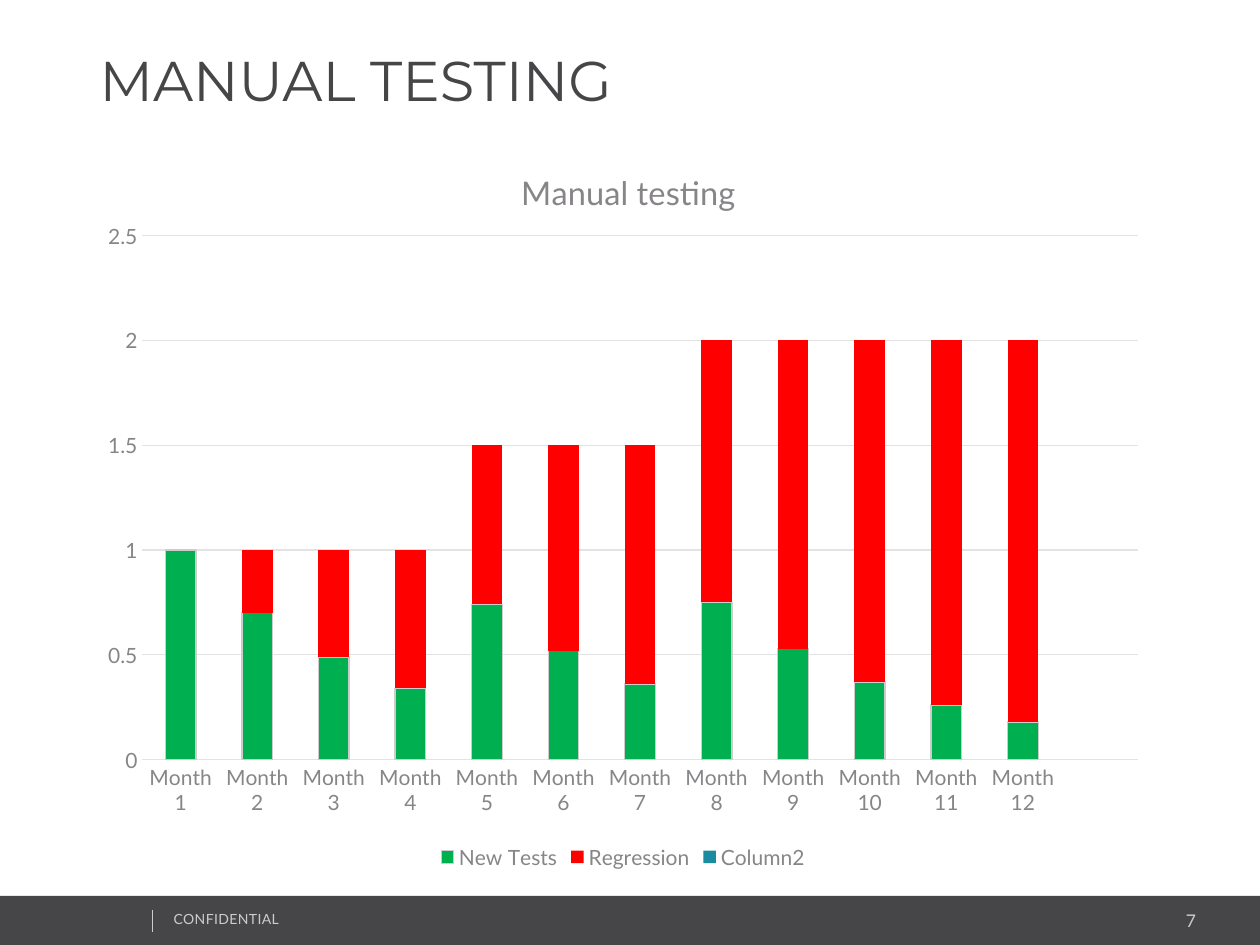
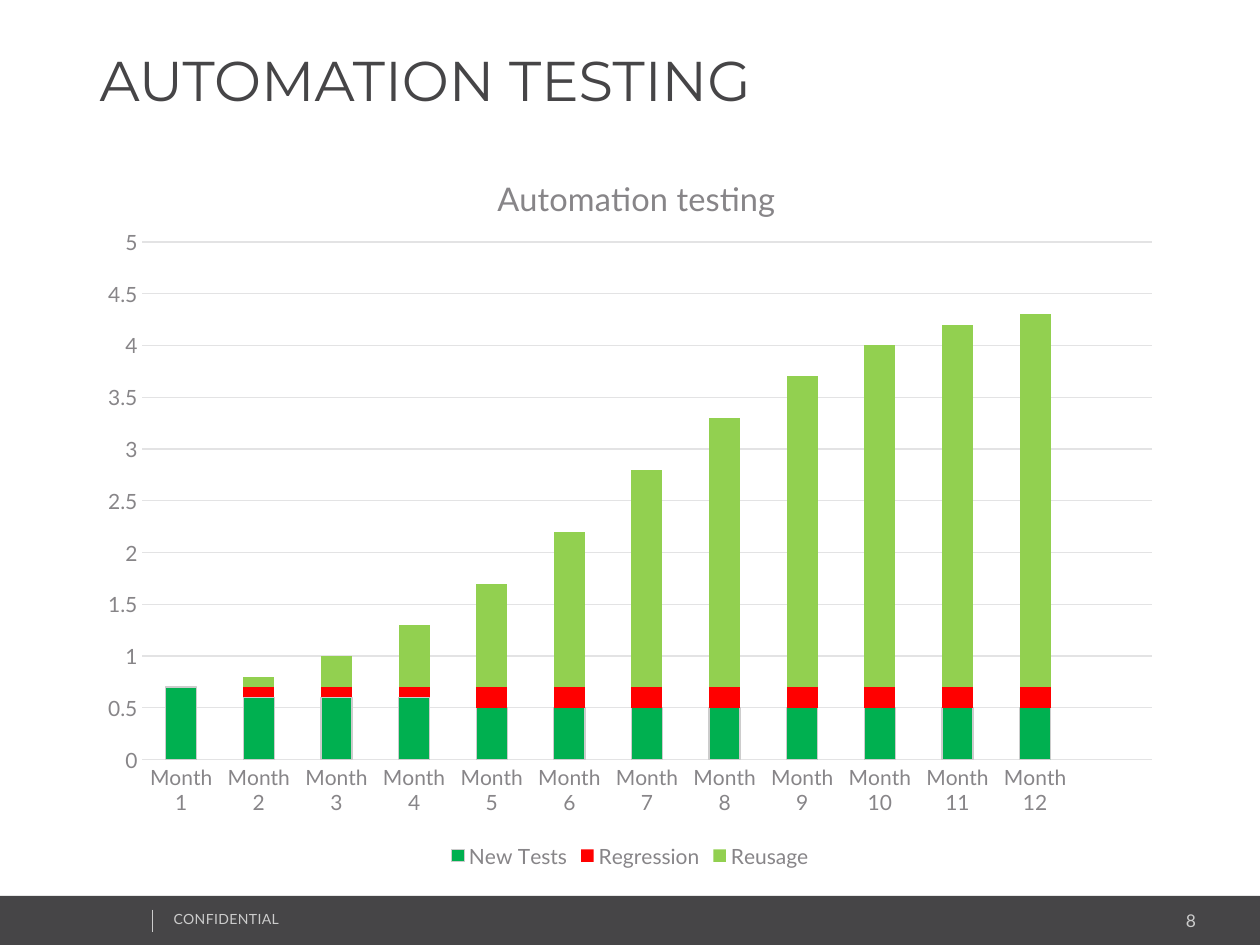
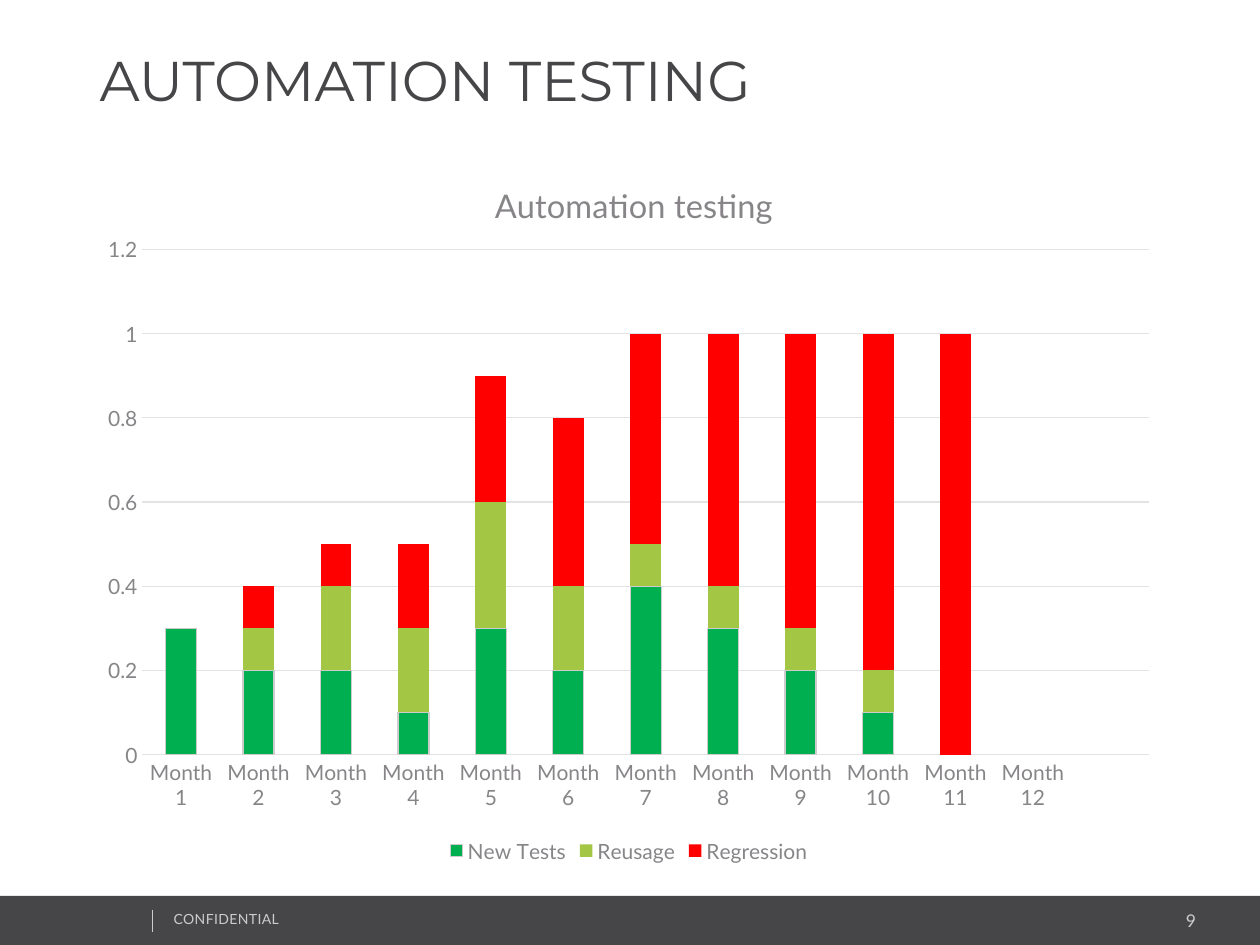
from pptx import Presentation
from pptx.chart.data import CategoryChartData
from pptx.dml.color import RGBColor
from pptx.enum.chart import XL_CHART_TYPE, XL_LEGEND_POSITION, XL_TICK_MARK
from pptx.enum.shapes import MSO_CONNECTOR, MSO_SHAPE
from pptx.enum.text import MSO_ANCHOR, PP_ALIGN
from pptx.oxml import parse_xml
from pptx.oxml.ns import nsdecls, qn
from pptx.util import Inches, Pt

STACKED = XL_CHART_TYPE.COLUMN_STACKED
BOTTOM = XL_LEGEND_POSITION.BOTTOM
NO_TICK = XL_TICK_MARK.NONE
STRAIGHT = MSO_CONNECTOR.STRAIGHT
RECT = MSO_SHAPE.RECTANGLE
TOP = MSO_ANCHOR.TOP
LEFT, RIGHT = PP_ALIGN.LEFT, PP_ALIGN.RIGHT

HEAD, BODY = "Montserrat", "Lato"
DARK, GREY, PALE, GRID = "464547", "878588", "CCCCCC", "E3E3E4"
GREEN, RED, TEAL, LIME, OLIVE = "00B050", "FF0000", "1B8BA0", "92D050", "A3C644"

FIRST_PAGE = 7
TITLE_ONLY = 5
MONTHS = [f"Month {n}" for n in range(1, 13)] + [""]  # one empty slot at the end


def rgb(color):
    return RGBColor.from_string(color)


def style(font, size, color, name=BODY):
    font.size, font.name = Pt(size), name
    font.color.rgb = rgb(color)


def stroke(line, color, width):
    line.color.rgb = rgb(color)
    line.width = Pt(width)


def place(part, target="", **sizes):
    """Give a chart part a manual layout, in fractions of the chart."""
    old = part.find(qn("c:layout"))
    if old is not None:
        part.remove(old)
    items = [("layoutTarget", target)] if target else []
    items += [("xMode", "edge"), ("yMode", "edge"), *sizes.items()]
    body = "".join(f'<c:{key} val="{val}"/>' for key, val in items)
    layout = parse_xml(f"<c:layout {nsdecls('c')}><c:manualLayout>{body}"
                       "</c:manualLayout></c:layout>")
    text = part.find(qn("c:tx"))
    part.insert(0 if text is None else 1, layout)


class Deck:
    def __init__(self):
        self.prs = Presentation()
        self.prs.slide_width, self.prs.slide_height = Inches(10), Inches(7.5)
        self.slide = None

    def add(self, title):
        self.slide = self.prs.slides.add_slide(self.prs.slide_layouts[TITLE_ONLY])
        self.footer(FIRST_PAGE + len(self.prs.slides) - 1)
        self.title(title)

    def title(self, text):
        box = self.slide.shapes.title
        box.left, box.top = Inches(0.69), Inches(0.31)
        box.width, box.height = Inches(8.62), Inches(0.76)
        frame = box.text_frame
        frame.text = text
        frame.vertical_anchor = TOP
        frame.paragraphs[0].alignment = LEFT
        style(frame.paragraphs[0].runs[0].font, 32, DARK, HEAD)

    def footer(self, page):
        band = self.slide.shapes.add_shape(
            RECT, 0, Inches(7.11), Inches(10), Inches(0.4))
        band.shadow.inherit = False
        band.fill.solid()
        band.fill.fore_color.rgb = rgb(DARK)
        band.line.fill.background()
        self.text(str(page), 7.96, 7.17, 1.63, 0.27, 10, RIGHT)
        label = self.text("CONFIDENTIAL", 1.28, 7.18, 2.53, 0.24, 8)
        label.font._element.set("spc", "20")
        self.rule(1.21, 7.22, 7.4)

    def text(self, text, x, y, w, h, size, align=LEFT):
        box = self.slide.shapes.add_textbox(
            Inches(x), Inches(y), Inches(w), Inches(h))
        frame = box.text_frame
        frame.word_wrap = True
        frame.text = text
        frame.paragraphs[0].alignment = align
        run = frame.paragraphs[0].runs[0]
        style(run.font, size, PALE)
        return run

    def rule(self, x, top, end):
        line = self.slide.shapes.add_connector(
            STRAIGHT, Inches(x), Inches(top), Inches(x), Inches(end))
        stroke(line.line, PALE, 0.25)
        line._element.spPr.append(parse_xml(f"<a:effectLst {nsdecls('a')}/>"))

    def chart(self, title, rows, box, title_x, top, end):
        """Stack the rows; title_x, top and end place title and plot on the slide."""
        x, y, w, h = box
        data = CategoryChartData()
        data.categories = MONTHS
        for name, _, vals in rows:
            data.add_series(name, vals + [None] * (len(MONTHS) - len(vals)))
        chart = self.slide.shapes.add_chart(
            STACKED, *map(Inches, box), data).chart
        style(chart.font, 10, DARK)

        chart.has_title = True
        frame = chart.chart_title.text_frame
        frame.text = title
        font = frame.paragraphs[0].runs[0].font
        style(font, 18.6, GREY)
        font.bold = False
        place(chart.element.find(".//" + qn("c:title")),
              x=(title_x - x) / w, y=(top - 0.58 - y) / h)
        place(chart.element.find(".//" + qn("c:plotArea")), "inner",
              x=(1.13 - x) / w, y=(top - y) / h,
              w=(x + w - 0.17 - 1.13) / w, h=(end - top) / h)

        chart.has_legend = True
        chart.legend.position = BOTTOM
        chart.legend.include_in_layout = False
        style(chart.legend.font, 12, GREY)
        for axis in (chart.category_axis, chart.value_axis):
            axis.major_tick_mark = axis.minor_tick_mark = NO_TICK
            style(axis.tick_labels.font, 12, GREY)
        stroke(chart.category_axis.format.line, GRID, 0.75)
        chart.value_axis.format.line.fill.background()
        stroke(chart.value_axis.major_gridlines.format.line, GRID, 0.75)

        plot = chart.plots[0]
        plot.gap_width, plot.overlap = 150, 100
        plot.vary_by_categories = False
        for series, (name, color, _) in zip(plot.series, rows):
            series.format.fill.solid()
            series.format.fill.fore_color.rgb = rgb(color)
            if name == "New Tests":
                stroke(series.format.line, PALE, 0.75)


def main():
    deck = Deck()

    deck.add("MANUAL TESTING")
    deck.chart("Manual testing", [
        ("New Tests", GREEN, [1, 0.7, 0.49, 0.34, 0.74, 0.52, 0.36,
                              0.75, 0.53, 0.37, 0.26, 0.18]),
        ("Regression", RED, [0, 0.3, 0.51, 0.66, 0.76, 0.98, 1.14,
                             1.25, 1.47, 1.63, 1.74, 1.82]),
        ("Column2", TEAL, []),
    ], (0.69, 1.07, 8.51, 5.87), 4.09, 1.87, 6.03)

    deck.add("AUTOMATION TESTING")
    deck.chart("Automation testing", [
        ("New Tests", GREEN, [0.7] + [0.6] * 3 + [0.5] * 8),
        ("Regression", RED, [0] + [0.1] * 3 + [0.2] * 8),
        ("Reusage", LIME, [0, 0.1, 0.3, 0.6, 1, 1.5, 2.1, 2.6, 3, 3.3, 3.5, 3.6]),
    ], (0.69, 1.07, 8.62, 5.86), 3.9, 1.92, 6.03)

    deck.add("AUTOMATION TESTING")
    deck.chart("Automation testing", [
        ("New Tests", GREEN, [0.3, 0.2, 0.2, 0.1, 0.3, 0.2, 0.4, 0.3, 0.2, 0.1, 0]),
        ("Reusage", OLIVE, [0, 0.1, 0.2, 0.2, 0.3, 0.2, 0.1, 0.1, 0.1, 0.1, 0]),
        ("Regression", RED, [0, 0.1, 0.1, 0.2, 0.3, 0.4, 0.5, 0.6, 0.7, 0.8, 1]),
    ], (0.69, 1.14, 8.6, 5.75), 3.88, 1.98, 5.99)

    deck.prs.save("out.pptx")


if __name__ == "__main__":
    main()
